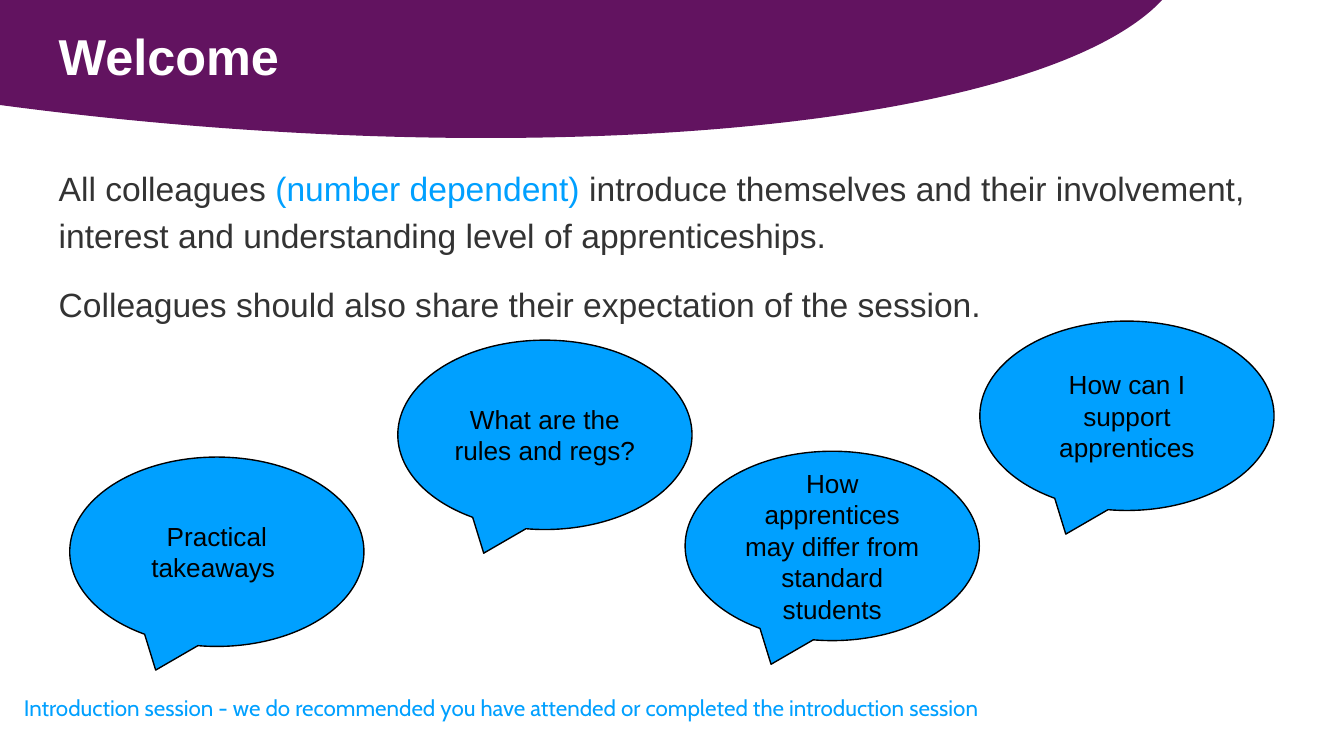
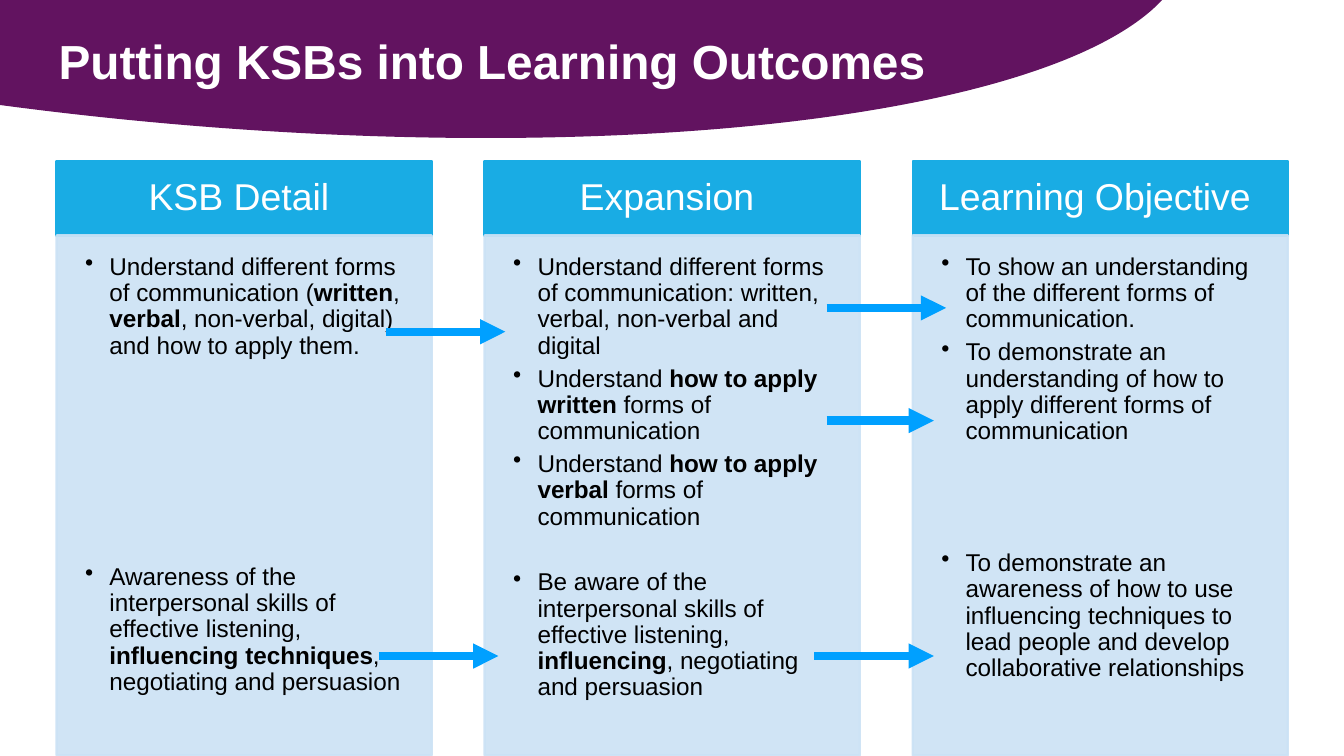
import lxml.etree
import pptx
import pptx.dml.color
import pptx.enum.shapes
import pptx.enum.text
import pptx.oxml.ns
import pptx.util

Cm = pptx.util.Cm
Pt = pptx.util.Pt
SHAPE = pptx.enum.shapes.MSO_SHAPE
ALIGN = pptx.enum.text.PP_ALIGN
ANCHOR = pptx.enum.text.MSO_ANCHOR

HUES = {
    "plum": "621360",
    "blue": "00A0FF",
    "sky": "19ACE4",
    "pale": "CBE2F5",
    "ink": "000000",
    "grey": "333333",
    "white": "FFFFFF",
}

BUBBLES = [
    (1.32, 8.64, "Practical takeaways "),
    (12.95, 8.53, "How apprentices may differ from standard students"),
    (18.52, 6.07, "How can I support apprentices"),
    (7.52, 6.43, "What are the rules and regs?"),
]

# Each column: heading, bullets, and the rows left free above the last bullet.
COLUMNS = [
    ("KSB Detail ", [
        "Understand different forms of communication (*written*, *verbal*, "
        "non-verbal, digital) and how to apply them.",
        "Awareness of the interpersonal skills of effective listening, "
        "*influencing techniques*, negotiating and persuasion",
    ], 6),
    ("Expansion ", [
        "Understand different forms of communication: written, verbal, "
        "non-verbal and digital",
        "Understand *how to apply written* forms of communication",
        "Understand *how to apply verbal* forms of communication",
        "Be aware of the interpersonal skills of effective listening, "
        "*influencing*, negotiating and persuasion",
    ], 1),
    ("Learning Objective ", [
        "To show an understanding of the different forms of communication.",
        "To demonstrate an understanding of how to apply different forms of "
        "communication",
        "To demonstrate an awareness of how to use influencing techniques to "
        "lead people and develop collaborative relationships",
    ], 3),
]
BULLET_GAP = 3.6
ROW_PITCH = 17.7

# Start x, end x, y
ARROWS = [
    (7.29, 9.55, 6.27),
    (15.62, 17.88, 5.82),
    (7.16, 9.42, 12.4),
    (15.39, 17.65, 12.4),
    (15.62, 17.65, 7.95),
]


def hue(name):
    return pptx.dml.color.RGBColor.from_string(HUES[name])


def add_sub(parent, tag, **attrs):
    return lxml.etree.SubElement(parent, pptx.oxml.ns.qn(tag), attrs)


def add_dot(para):
    props = para._p.get_or_add_pPr()
    props.set("marL", str(Cm(0.64)))
    props.set("indent", str(Cm(-0.46)))
    add_sub(add_sub(props, "a:buClr"), "a:srgbClr", val=HUES["ink"])
    add_sub(props, "a:buChar", char="•")


def write(shape, texts, size, color="ink", font="Arial", bold=False,
          accent=None, align=ALIGN.LEFT, anchor=ANCHOR.TOP, leading=1.0,
          gaps=(), after=0, dots=False, inset=(0.25, 0.25, 0.25, 0.25)):
    """Fill a shape with paragraphs; *marked* words turn bold or take the accent."""
    frame = shape.text_frame
    frame.word_wrap = True
    frame.vertical_anchor = anchor
    (frame.margin_left, frame.margin_top,
     frame.margin_right, frame.margin_bottom) = map(Cm, inset)
    for i, text in enumerate(texts):
        para = frame.add_paragraph() if i else frame.paragraphs[0]
        if dots:
            add_dot(para)
        para.alignment = align
        para.line_spacing = leading
        para.space_before = Pt(gaps[i - 1] if i and gaps else 0)
        para.space_after = Pt(after)
        for j, part in enumerate(text.split("*")):
            marked = j % 2 == 1
            run = para.add_run()
            run.text = part
            run.font.name = font
            run.font.size = Pt(size)
            run.font.bold = bold or (marked and not accent)
            run.font.color.rgb = hue(accent if marked and accent else color)


def add_text(slide, box, texts, size, **look):
    write(slide.shapes.add_textbox(*map(Cm, box)), texts, size, **look)


def add_form(slide, kind, box, fill, line=None, width=0.75, alpha=None):
    """Add a flat preset shape; alpha is its opacity in percent."""
    shape = slide.shapes.add_shape(kind, *map(Cm, box))
    shape.shadow.inherit = False
    shape.fill.solid()
    shape.fill.fore_color.rgb = hue(fill)
    if line:
        shape.line.color.rgb = hue(line)
        shape.line.width = Pt(width)
    else:
        shape.line.fill.background()
    if alpha:
        for node in shape._element.spPr.iter(pptx.oxml.ns.qn("a:srgbClr")):
            add_sub(node, "a:alpha", val=str(alpha * 1000))
    return shape


def add_page(deck, title, top, size, leading=1.0):
    """Add a slide with the plum sweep and its title."""
    slide = deck.slides.add_slide(deck.slide_layouts[6])
    sweep = add_form(slide, SHAPE.OVAL, (-15.65, -7.77, 38.18, 10.11), "plum")
    sweep.rotation = 5.2
    add_text(slide, (0.86, top, 23.67, 1.73), [title], size,
             color="white", bold=True, leading=leading)
    return slide


def add_bubble(slide, left, top, text):
    shape = add_form(slide, SHAPE.OVAL_CALLOUT, (left, top, 5.56, 3.58),
                     "blue", line="ink")
    shape.adjustments[0] = -0.208
    shape.adjustments[1] = 0.625
    write(shape, [text], 14, align=ALIGN.CENTER, anchor=ANCHOR.MIDDLE)


def add_column(slide, left, head, items, rows):
    wide = 7.09
    top = add_form(slide, SHAPE.RECTANGLE, (left, 3.05, wide, 1.41),
                   "sky", line="sky", width=1.25)
    write(top, [head], 20, color="white", align=ALIGN.CENTER,
          anchor=ANCHOR.MIDDLE, leading=0.9, inset=(0.48, 0.28, 0.48, 0.28))
    panel = add_form(slide, SHAPE.RECTANGLE, (left, 4.45, wide, 9.83),
                     "pale", line="pale", width=1.25, alpha=90)
    gaps = [BULLET_GAP] * (len(items) - 1)
    gaps[-1] += rows * ROW_PITCH
    write(panel, items, 13, leading=0.9, gaps=gaps, dots=True,
          inset=(0.36, 0.36, 0.48, 0.53))


def add_arrow(slide, start, end, y):
    arrow = slide.shapes.add_connector(
        pptx.enum.shapes.MSO_CONNECTOR.STRAIGHT, Cm(start), Cm(y), Cm(end), Cm(y))
    arrow.line.color.rgb = hue("blue")
    arrow.line.width = Pt(4.5)
    add_sub(arrow.line._get_or_add_ln(), "a:tailEnd", type="triangle")
    add_sub(arrow._element.spPr, "a:effectLst")


def main():
    deck = pptx.Presentation()
    deck.slide_width = Cm(25.4)
    deck.slide_height = Cm(14.29)

    hello = add_page(deck, "Welcome", 0.23, 27)
    add_text(hello, (0.86, 2.82, 23.67, 9.63), [
        "All colleagues *(number dependent)* introduce themselves and their "
        "involvement, interest and understanding level of apprenticeships.",
        "Colleagues should also share their expectation of the session.",
    ], 18, color="grey", accent="blue", leading=1.15, gaps=[12])
    for bubble in BUBBLES:
        add_bubble(hello, *bubble)
    add_text(hello, (0.2, 12.8, 24.66, 1.22), [
        "Introduction session - we do recommended you have attended or "
        "completed the introduction session",
    ], 12, color="blue", font="Cabin", leading=1.15, after=12)

    goals = add_page(deck, "Putting KSBs into Learning Outcomes", 0.18, 25.6,
                     leading=1.15)
    for i, column in enumerate(COLUMNS):
        add_column(goals, 1.07 + i * 8.09, *column)
    for arrow in ARROWS:
        add_arrow(goals, *arrow)

    deck.save("out.pptx")


if __name__ == "__main__":
    main()
